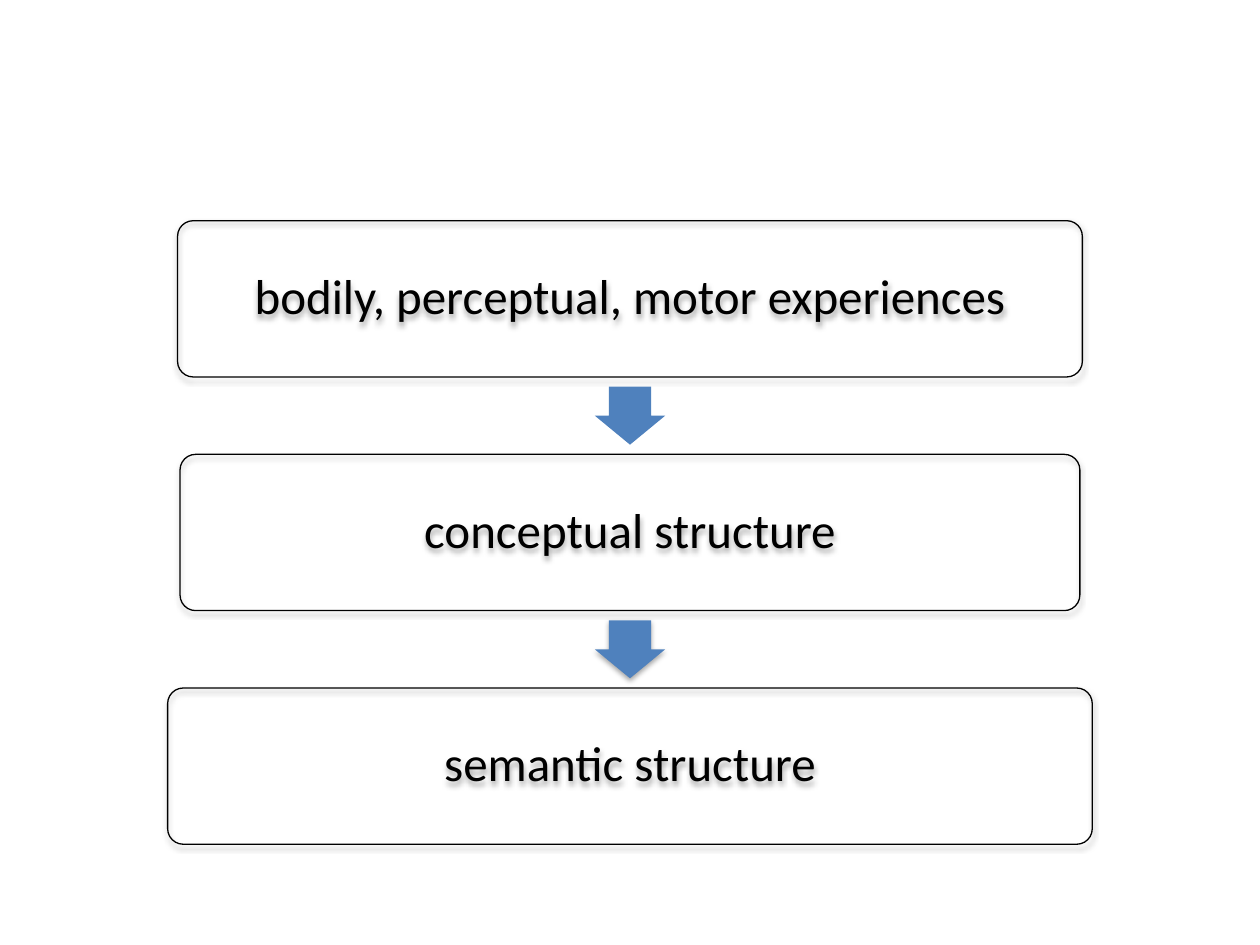
"""Build a slide with three stacked boxes linked by downward arrows."""
import pptx
import pptx.dml.color
import pptx.enum.shapes
import pptx.enum.text
import pptx.oxml
import pptx.oxml.ns
import pptx.util

Cm = pptx.util.Cm
Pt = pptx.util.Pt
SHAPE = pptx.enum.shapes.MSO_SHAPE

SLIDE_W, SLIDE_H = 25.4, 19.05
BOX_TOP, BOX_H, PITCH = 4.45, 3.15, 4.71
ARROW_W, ARROW_H = 1.17, 1.42
BOXES = [
    ("bodily, perceptual, motor experiences", 18.24),
    ("conceptual structure", 18.14),
    ("semantic structure", 18.64),
]
SHADOW = (
    '<a:outerShdw %s blurRad="%d" dist="%d" dir="5400000" rotWithShape="0">'
    '<a:srgbClr val="000000"><a:alpha val="35000"/></a:srgbClr></a:outerShdw>'
)


def rgb(value):
    return pptx.dml.color.RGBColor.from_string(value)


def write(tf, text, font="Calibri", size=28, color="000000", spacing=0.9, inset=0.4):
    tf.word_wrap = True
    tf.vertical_anchor = pptx.enum.text.MSO_ANCHOR.MIDDLE
    tf.margin_left = tf.margin_right = tf.margin_top = tf.margin_bottom = Cm(inset)
    p = tf.paragraphs[0]
    p.alignment = pptx.enum.text.PP_ALIGN.CENTER
    p.line_spacing = spacing
    r = p.add_run()
    r.text = text
    r.font.name = font
    r.font.size = Pt(size)
    r.font.color.rgb = rgb(color)


class Deck:
    line = "000000"
    accent = "4F81BD"

    def __init__(self, slide):
        self.s = slide

    def shape(self, kind, mid_y, width, height, adjustments, shadow):
        sp = self.s.shapes.add_shape(
            kind, Cm((SLIDE_W - width) / 2), Cm(mid_y - height / 2), Cm(width), Cm(height)
        )
        for i, value in enumerate(adjustments):
            sp.adjustments[i] = value
        sp.shadow.inherit = False
        if shadow:
            effects = sp._element.spPr.find(pptx.oxml.ns.qn("a:effectLst"))
            xml = SHADOW % (pptx.oxml.ns.nsdecls("a"), Pt(3.1), Pt(1.8))
            effects.append(pptx.oxml.parse_xml(xml))
        return sp

    def box(self, text, mid_y, width):
        sp = self.shape(SHAPE.ROUNDED_RECTANGLE, mid_y, width, BOX_H, [0.1], True)
        sp.fill.background()
        sp.line.color.rgb = rgb(self.line)
        sp.line.width = Pt(0.75)
        write(sp.text_frame, text)

    def arrow(self, mid_y, shadow):
        sp = self.shape(SHAPE.RIGHT_ARROW, mid_y, ARROW_W, ARROW_H, [0.6, 0.5], shadow)
        sp.rotation = 90
        sp.fill.solid()
        sp.fill.fore_color.rgb = rgb(self.accent)
        sp.line.fill.background()


def main():
    prs = pptx.Presentation()
    prs.slide_width, prs.slide_height = Cm(SLIDE_W), Cm(SLIDE_H)
    deck = Deck(prs.slides.add_slide(prs.slide_layouts[6]))
    for i, (text, width) in enumerate(BOXES):
        mid_y = BOX_TOP + BOX_H / 2 + i * PITCH
        if i:
            deck.arrow(mid_y - PITCH / 2, shadow=i > 1)
        deck.box(text, mid_y, width)
    prs.save("out.pptx")


if __name__ == "__main__":
    main()
